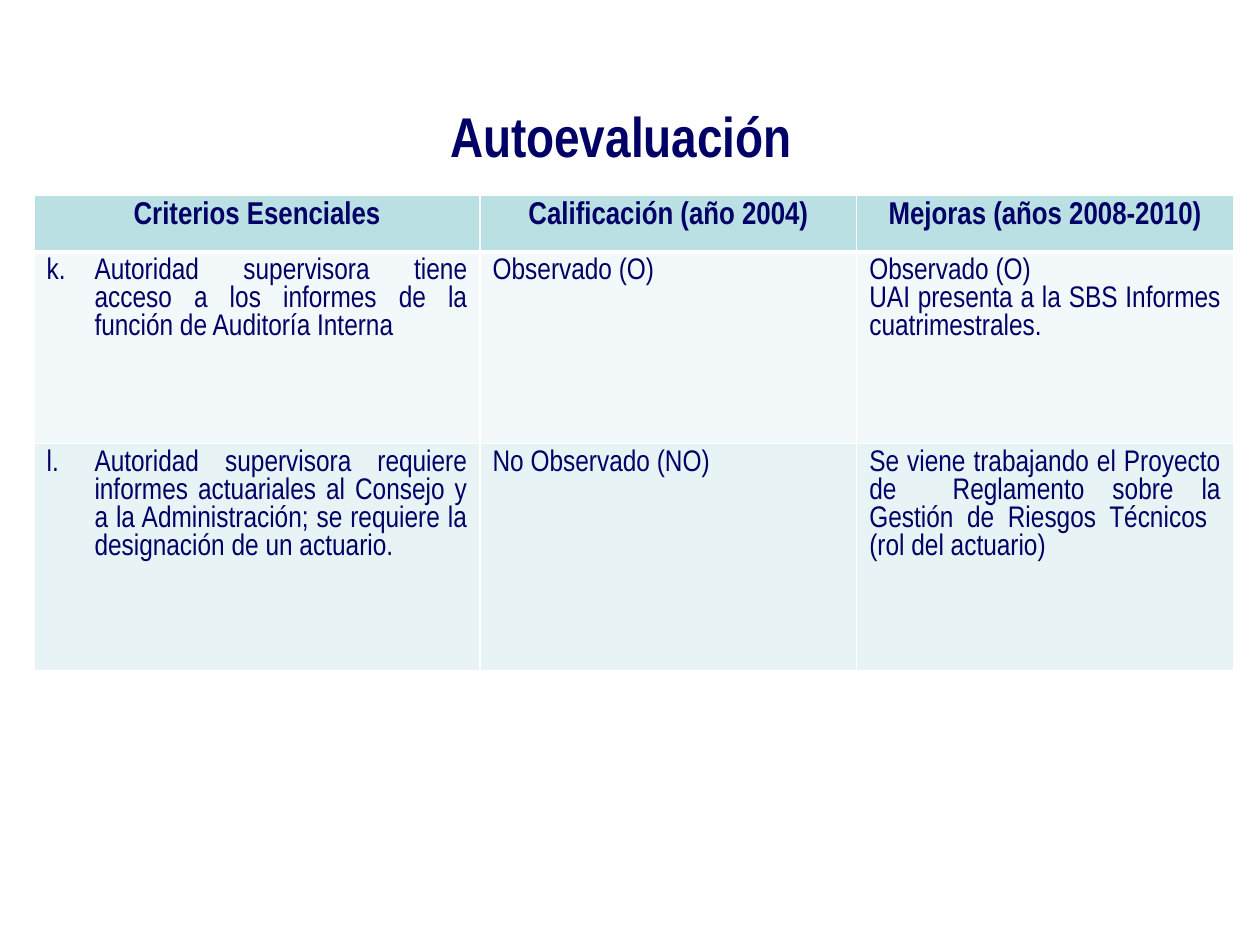
from lxml.etree import SubElement
from pptx import Presentation
from pptx.dml.color import RGBColor
from pptx.enum.text import MSO_AUTO_SIZE, PP_ALIGN
from pptx.oxml.ns import qn
from pptx.util import Inches, Pt

NAVY = RGBColor(0x00, 0x00, 0x66)
WHITE = RGBColor(0xFF, 0xFF, 0xFF)
TEAL = RGBColor(0xBB, 0xE0, 0xE3)
PALE = RGBColor(0xF3, 0xF9, 0xFA)
MIST = RGBColor(0xE7, 0xF3, 0xF4)

# Content: each cell is a list of paragraphs
TITLE = "Autoevaluación"
ROWS = [
    [["Criterios Esenciales"], ["Calificación (año 2004)"], ["Mejoras (años 2008-2010)"]],
    [["Autoridad supervisora tiene acceso a los informes de la función de Auditoría Interna"],
     ["Observado (O)"],
     ["Observado (O)", "UAI presenta a la SBS Informes cuatrimestrales."]],
    [["Autoridad supervisora requiere informes actuariales al Consejo y a la Administración; "
      "se requiere la designación de un actuario."],
     ["No Observado (NO)"],
     ["Se viene trabajando el Proyecto de  Reglamento sobre la Gestión de Riesgos Técnicos  "
      "(rol del actuario)"]],
]
ROW_FILLS = [TEAL, PALE, MIST]
ROW_HEIGHTS = [0.45, 1.52, 1.8]
COLUMN_WIDTHS = [3.54, 2.99, 2.99]
FIRST_LETTER = 11  # the list goes on at "k."
INDENT = Inches(0.38)

BASE_FONT = {"name": "Arial Narrow"}
TITLE_FONT = {**BASE_FONT, "size": Pt(32), "bold": True}
HEADER_FONT = {**BASE_FONT, "size": Pt(18), "bold": True}
BODY_FONT = {**BASE_FONT, "size": Pt(17), "bold": False}


def write(paragraph, text, align, font_format):
    paragraph.alignment = align
    run = paragraph.add_run()
    run.text = text
    for attribute, value in font_format.items():
        setattr(run.font, attribute, value)
    run.font.color.rgb = NAVY


def add_letter(paragraph, number):
    properties = paragraph._p.get_or_add_pPr()
    properties.set("marL", str(INDENT))
    properties.set("indent", str(-INDENT))
    SubElement(properties, qn("a:buFont"), typeface="+mj-lt")
    SubElement(properties, qn("a:buAutoNum"), type="alphaLcPeriod", startAt=str(number))


def add_borders(cell, widths):
    properties = cell._tc.get_or_add_tcPr()
    for side, width in widths.items():
        line = SubElement(properties, qn(f"a:ln{side}"), w=str(Pt(width)))
        SubElement(SubElement(line, qn("a:solidFill")), qn("a:srgbClr"), val=str(WHITE))


presentation = Presentation()
presentation.slide_width, presentation.slide_height = Inches(10), Inches(7.5)
slide = presentation.slides.add_slide(presentation.slide_layouts[6])

# Table of criteria
criteria = slide.shapes.add_table(
    len(ROWS), len(COLUMN_WIDTHS), Inches(0.27), Inches(1.55),
    Inches(sum(COLUMN_WIDTHS)), Inches(sum(ROW_HEIGHTS))).table
for column, width in zip(criteria.columns, COLUMN_WIDTHS):
    column.width = Inches(width)

for r, (row, fill, height) in enumerate(zip(ROWS, ROW_FILLS, ROW_HEIGHTS)):
    criteria.rows[r].height = Inches(height)
    header = r == 0
    align = PP_ALIGN.CENTER if header else PP_ALIGN.JUSTIFY
    font_format = HEADER_FONT if header else BODY_FONT
    # The rule under the header is thicker than the rest
    borders = {"L": 1, "R": 1, "T": 3 if r == 1 else 1, "B": 3 if header else 1}
    for c, lines in enumerate(row):
        cell = criteria.cell(r, c)
        add_borders(cell, borders)
        cell.fill.solid()
        cell.fill.fore_color.rgb = fill
        for i, line in enumerate(lines):
            paragraph = cell.text_frame.add_paragraph() if i else cell.text_frame.paragraphs[0]
            if c == 0 and not header:
                add_letter(paragraph, FIRST_LETTER + r - 1)
            write(paragraph, line, align, font_format)

# Title
heading = slide.shapes.add_textbox(Inches(0.67), Inches(0.76), Inches(8.52), Inches(0.63)).text_frame
heading.word_wrap = True
heading.auto_size = MSO_AUTO_SIZE.SHAPE_TO_FIT_TEXT
write(heading.paragraphs[0], TITLE, PP_ALIGN.CENTER, TITLE_FONT)

presentation.save("out.pptx")
